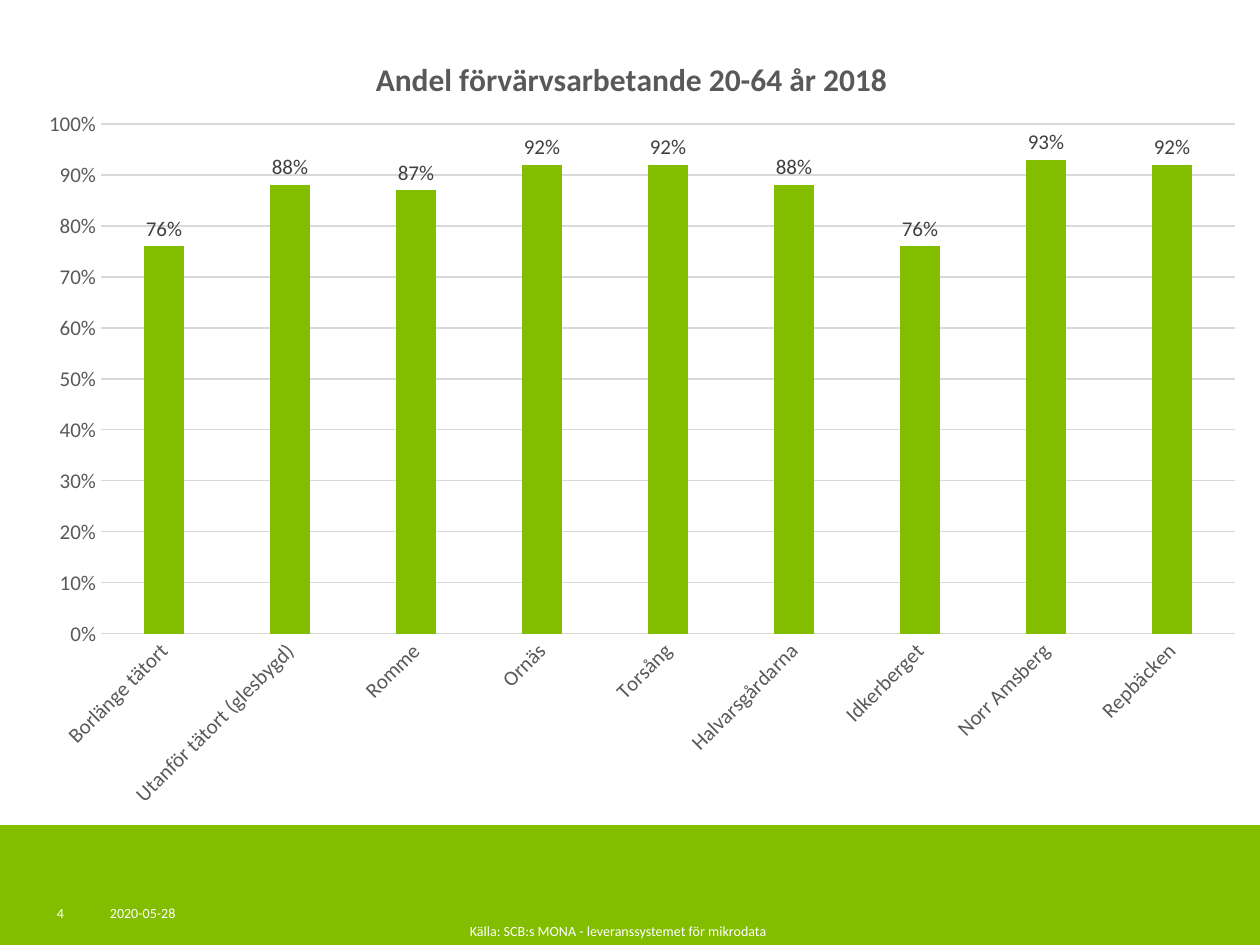
from lxml import etree
from pptx import Presentation
from pptx.chart.data import CategoryChartData
from pptx.dml.color import RGBColor
from pptx.enum.chart import XL_CHART_TYPE as ChartType, XL_LABEL_POSITION as LabelPos
from pptx.enum.chart import XL_TICK_MARK as Tick
from pptx.enum.shapes import MSO_SHAPE as Shape
from pptx.enum.text import MSO_ANCHOR as Anchor, PP_ALIGN as Align
from pptx.oxml.ns import qn
from pptx.util import Emu, Pt

PX = 914400 // 126
FONT = "Calibri"
COLORS = {name: RGBColor.from_string(code) for name, code in {
    "green": "83BD00", "white": "FFFFFF", "axis": "595959",
    "grid": "D9D9D9", "value": "404040"}.items()}

prs = Presentation()
prs.slide_width, prs.slide_height = Emu(9144000), Emu(6858000)
slide = prs.slides.add_slide(prs.slide_layouts[6])


def add_text(text, left, top, width, height, size=8, color="white",
             align=Align.LEFT, anchor=Anchor.TOP, inset=(0, 0)):
    box = slide.shapes.add_textbox(*(Emu(v * PX) for v in (left, top, width, height)))
    frame = box.text_frame
    frame.word_wrap = True
    frame.vertical_anchor = anchor
    frame.margin_left = frame.margin_right = Pt(inset[0])
    frame.margin_top = frame.margin_bottom = Pt(inset[1])
    line = frame.paragraphs[0]
    line.text, line.alignment = text, align
    style(line.font, size, color)


def style(font, size, color, bold=False):
    font.name, font.size, font.bold = FONT, Pt(size), bold
    font.color.rgb = COLORS[color]


# Footer band
band = slide.shapes.add_shape(Shape.RECTANGLE, 0, Emu(825 * PX),
                              prs.slide_width, prs.slide_height - Emu(825 * PX))
band.shadow.inherit = False
band.fill.solid()
band.fill.fore_color.rgb = COLORS["green"]
band.line.fill.background()

# Date and slide number
add_text("2020-05-28", 110, 905, 89, 40)
add_text("4", 57, 905, 39, 40)

# Employment chart
shares = {
    "Borlänge tätort": 0.76, "Utanför tätort (glesbygd)": 0.88, "Romme": 0.87,
    "Ornäs": 0.92, "Torsång": 0.92, "Halvarsgårdarna": 0.88,
    "Idkerberget": 0.76, "Norr Amsberg": 0.93, "Repbäcken": 0.92}
data = CategoryChartData(number_format="0%")
data.categories = list(shares)
data.add_series("Series 1", list(shares.values()))
chart = slide.shapes.add_chart(
    ChartType.COLUMN_CLUSTERED,
    *(Emu(v * PX) for v in (24, 20, 1236, 804)), data).chart
chart.has_legend = False
chart.font.name, chart.font.size = FONT, Pt(10)

chart.has_title = True
heading = chart.chart_title.text_frame.paragraphs[0]
heading.text = "Andel förvärvsarbetande 20-64 år 2018"
style(heading.runs[0].font, 18, "axis", bold=True)

# Columns and their labels
plot = chart.plots[0]
plot.gap_width, plot.overlap = 219, -27
plot.vary_by_categories = False
columns = plot.series[0]
columns.format.fill.solid()
columns.format.fill.fore_color.rgb = COLORS["green"]
labels = columns.data_labels
labels.show_value = True
labels.number_format, labels.number_format_is_linked = "0%", False
labels.position = LabelPos.OUTSIDE_END
style(labels.font, 12, "value")

# Axes
places, percent = chart.category_axis, chart.value_axis
for axis in (places, percent):
    axis.major_tick_mark = axis.minor_tick_mark = Tick.NONE
    style(axis.tick_labels.font, 12, "axis")
places.tick_labels.font._element.getparent().getparent().getparent().find(
    qn("a:bodyPr")).set("rot", "-2700000")
percent.minimum_scale, percent.maximum_scale, percent.major_unit = 0, 1, 0.1
percent.tick_labels.number_format = "0%"
percent.tick_labels.number_format_is_linked = False
percent.format.line.fill.background()
for line in (places.format.line, percent.major_gridlines.format.line):
    line.color.rgb, line.width = COLORS["grid"], Pt(0.75)

# Place the title and the plot area as fractions of the chart
plot_area = chart._chartSpace.chart.plotArea
title = chart.chart_title._element
for parent, index, settings in (
        (title, 1, {"xMode": "edge", "yMode": "edge", "x": 0.28, "y": 0.04}),
        (plot_area, 0, {"layoutTarget": "inner", "xMode": "edge", "yMode": "edge",
                        "x": round(77 / 1236, 4), "y": round(104 / 804, 4),
                        "w": round(1134 / 1236, 4), "h": round(510 / 804, 4)})):
    for old in parent.findall(qn("c:layout")):
        parent.remove(old)
    layout = etree.Element(qn("c:layout"))
    manual = etree.SubElement(layout, qn("c:manualLayout"))
    for tag, value in settings.items():
        etree.SubElement(manual, qn("c:" + tag)).set("val", str(value))
    parent.insert(index, layout)

# Source line
add_text("Källa: SCB:s MONA - leveranssystemet för mikrodata", 286, 887, 665, 59,
         align=Align.CENTER, anchor=Anchor.BOTTOM, inset=(7.2, 3.6))

prs.save("out.pptx")
